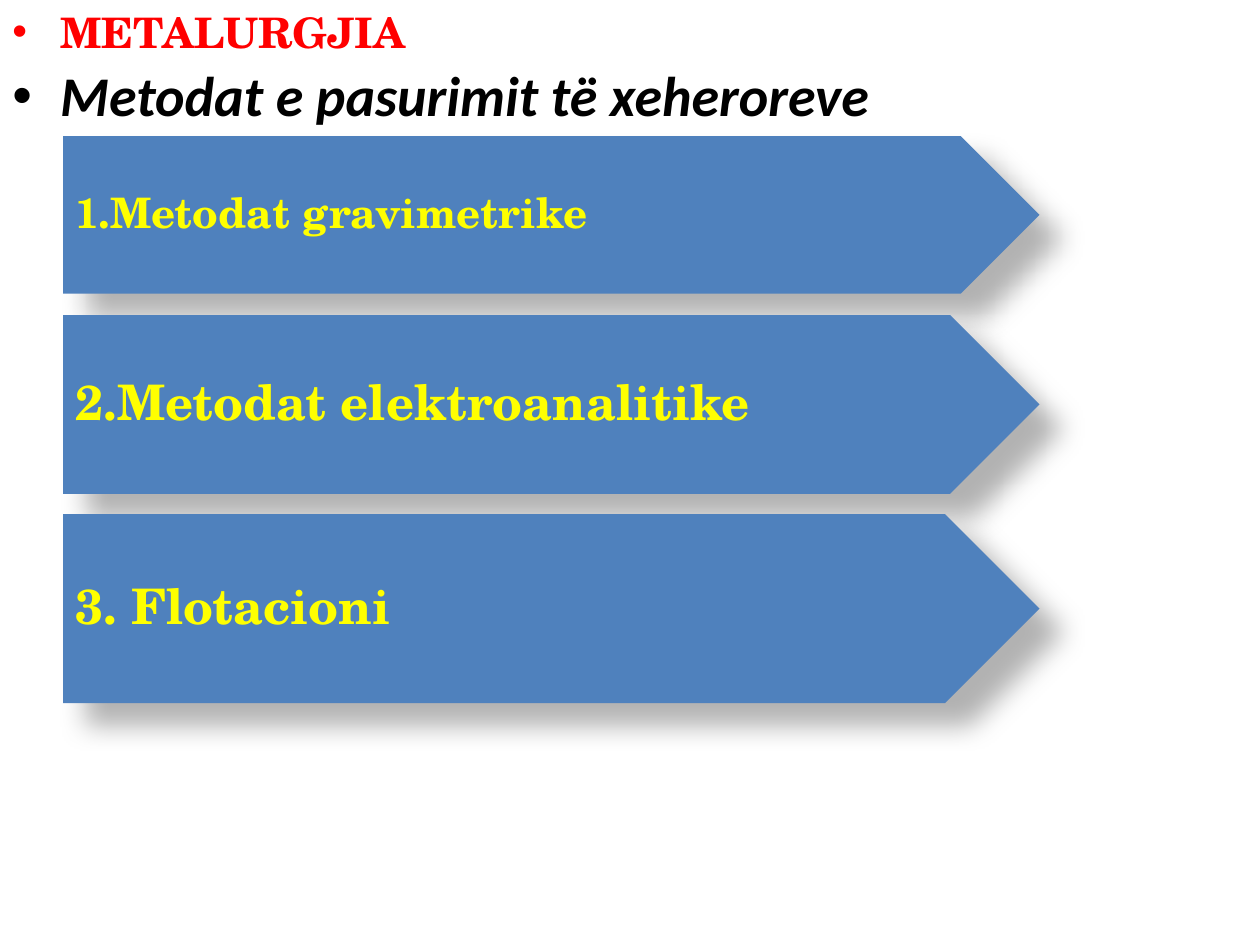
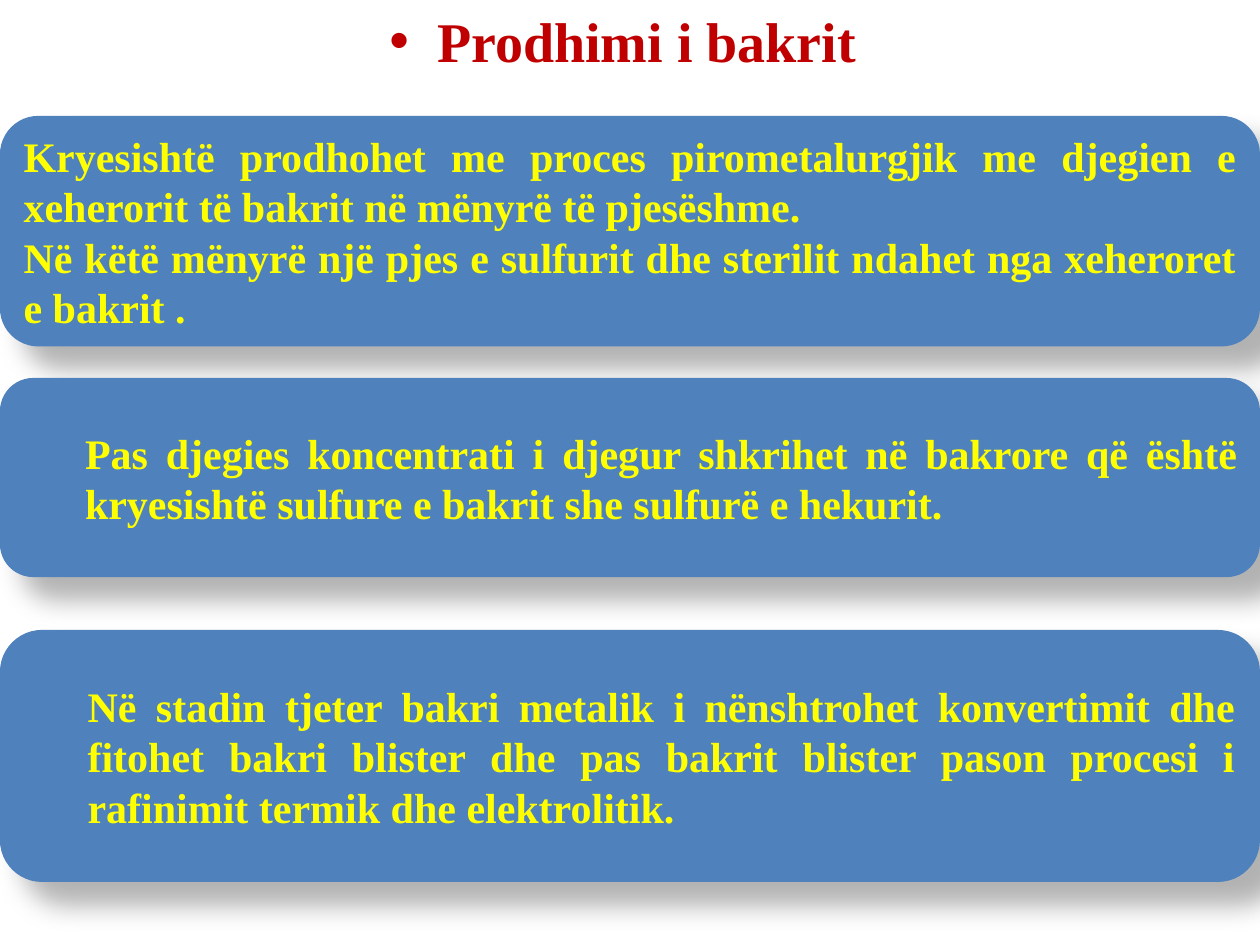
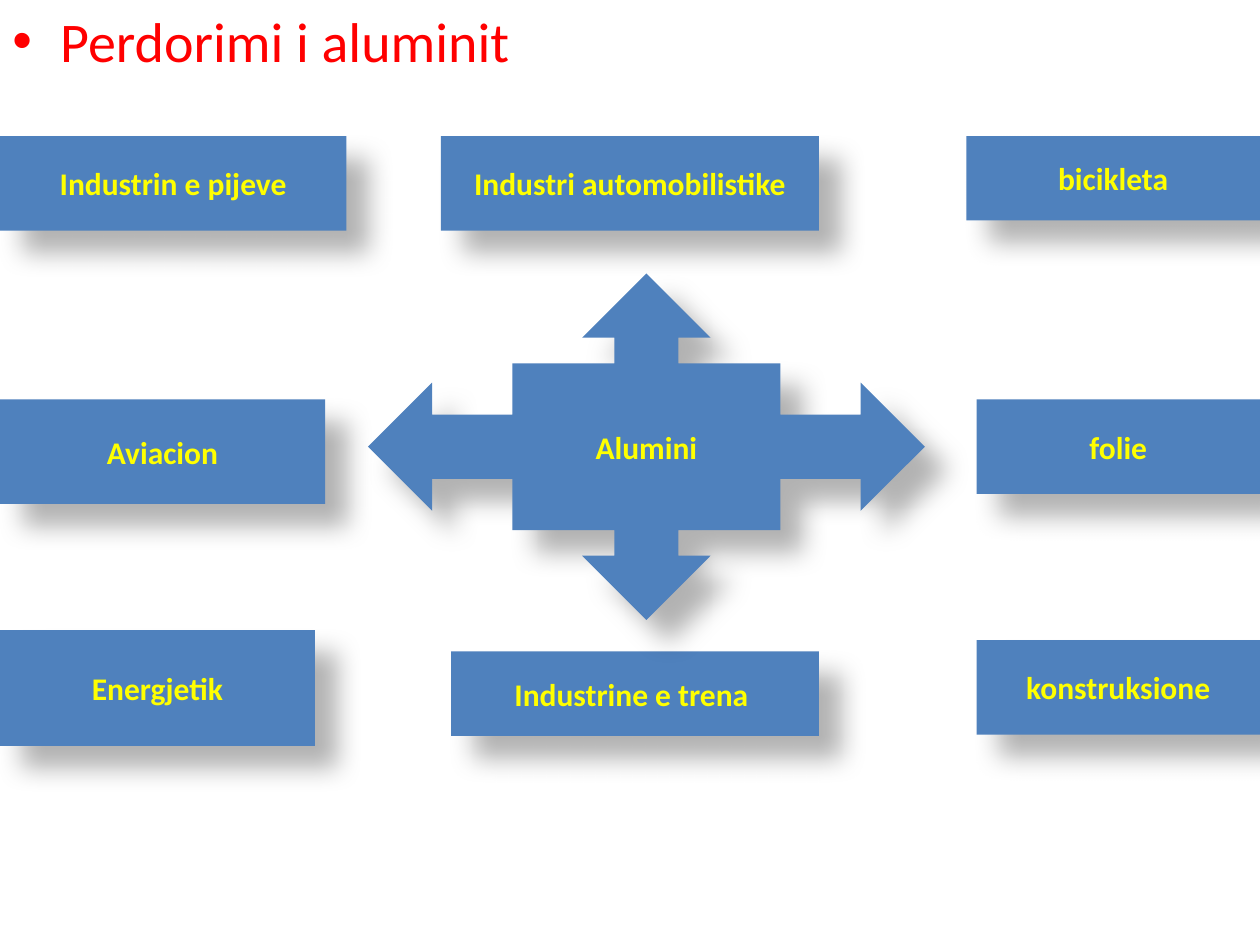
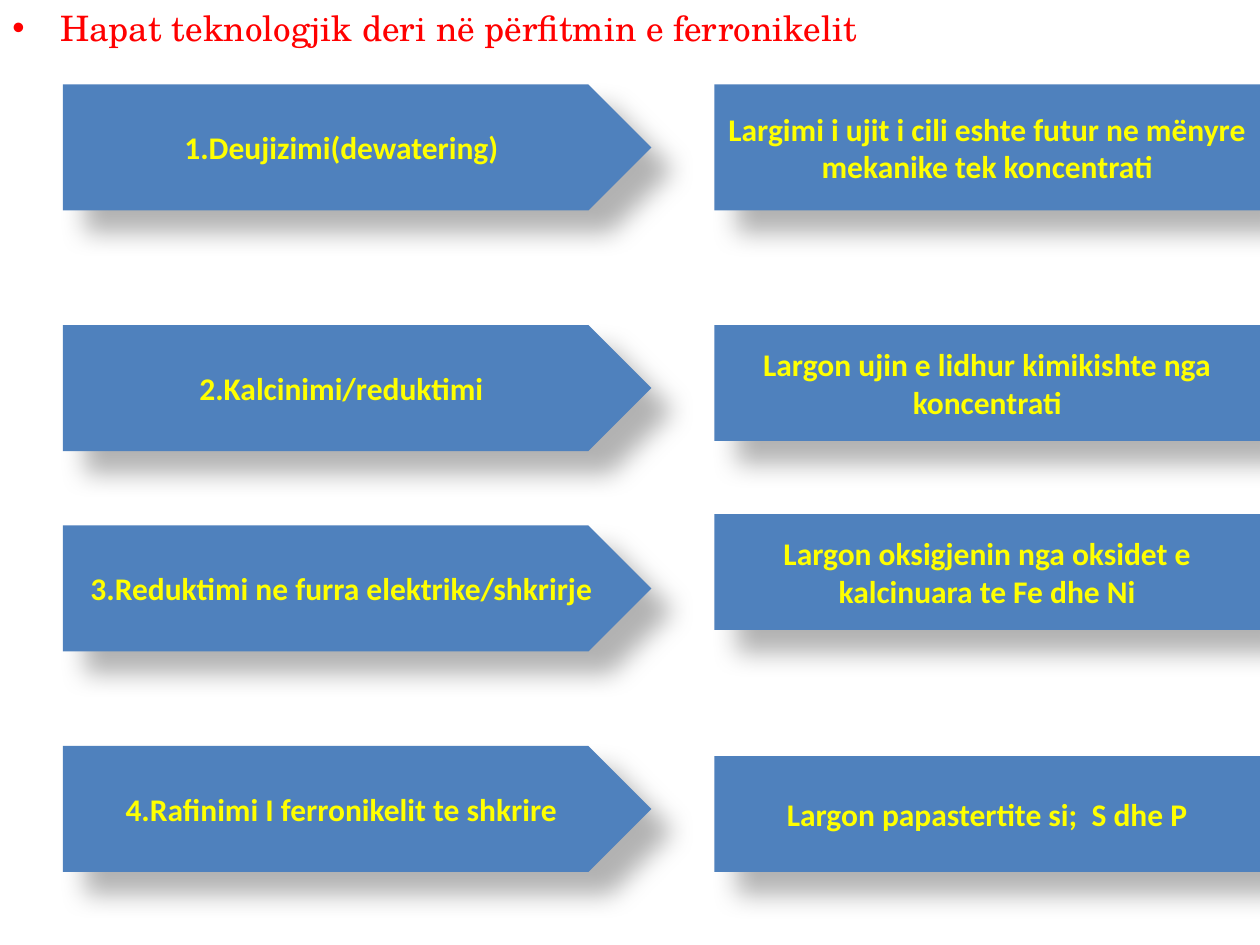
from lxml import etree
from pptx import Presentation
from pptx.dml.color import RGBColor
from pptx.enum.shapes import MSO_SHAPE as Shape
from pptx.enum.text import MSO_ANCHOR as Anchor, PP_ALIGN as Align
from pptx.oxml import parse_xml
from pptx.oxml.ns import nsdecls, qn
from pptx.util import Inches, Pt

BLUE, YELLOW, RED, DARK_RED, BLACK = "4F81BD", "FFFF00", "FF0000", "C00000", "000000"
SCHOLA, TIMES, CALIBRI = "TeX Gyre Schola", "Times New Roman", "Calibri"
WIDTH, HEIGHT = 10, 7.5

METHODS = [
    ("1.Metodat gravimetrike", 24, 1.08, 1.25),
    ("2.Metodat elektroanalitike", 28, 2.5, 1.42),
    ("3. Flotacioni", 28, 4.08, 1.5),
]

COPPER_STEPS = [
    (["Kryesishtë prodhohet me proces pirometalurgjik me djegien e xeherorit të bakrit në mënyrë të pjesëshme.",
      "Në këtë mënyrë një pjes e sulfurit dhe sterilit ndahet nga xeheroret e bakrit ."], 0, 0.92, 1.83),
    (["Pas djegies koncentrati i djegur shkrihet në bakrore që është kryesishtë sulfure e bakrit she sulfurë e hekurit."],
     1, 3, 1.58),
    (["Në stadin tjeter bakri metalik i nënshtrohet konvertimit dhe fitohet bakri blister dhe pas bakrit blister "
      "pason procesi i rafinimit termik dhe elektrolitik."], 1, 5, 2),
]

ALUMINIUM_USES = [
    ("Industrin e pijeve", (0, 1.08, 2.75, 0.75)),
    ("Industri automobilistike", (3.5, 1.08, 3, 0.75)),
    ("bicikleta", (7.67, 1.08, 2.33, 0.67)),
    ("Aviacion", (0, 3.17, 2.58, 0.83)),
    ("Energjetik", (0, 5, 2.5, 0.92)),
    ("Industrine e trena ", (3.58, 5.17, 2.92, 0.67)),
    ("konstruksione", (7.75, 5.08, 2.25, 0.75)),
    ("folie", (7.75, 3.17, 2.25, 0.75)),
]

FERRONICKEL_STEPS = [
    ("1.Deujizimi(dewatering)", 0.67),
    ("2.Kalcinimi/reduktimi", 2.58),
    ("3.Reduktimi ne furra elektrike/shkrirje", 4.17),
    ("4.Rafinimi I ferronikelit te shkrire", 5.92),
]
FERRONICKEL_EFFECTS = [
    ("Largimi i ujit i cili eshte futur ne mënyre mekanike tek koncentrati", 0.67, 1),
    ("Largon ujin e lidhur kimikishte nga koncentrati", 2.58, 0.92),
    ("Largon oksigjenin nga oksidet e kalcinuara te Fe dhe Ni", 4.08, 0.92),
    ("Largon papastertite si;  S dhe P", 6, 0.92),
]


def rgb(color):
    return RGBColor.from_string(color)


def style(p, size, font, color, bold=False, italic=False, align=Align.LEFT, spacing=None):
    p.font.size, p.font.name = Pt(size), font
    p.font.bold, p.font.italic = bold, italic
    p.font.color.rgb = rgb(color)
    p.alignment = align
    if spacing:
        p.line_spacing = spacing


def set_indent(p, left, first=0):
    pPr = p._p.get_or_add_pPr()
    pPr.set("marL", str(Inches(left)))
    pPr.set("indent", str(Inches(first)))
    return pPr


def add_heading(s, *lines):
    tf = s.shapes.add_textbox(0, 0, Inches(WIDTH), Inches(HEIGHT)).text_frame
    tf.word_wrap = True
    for i, (text, size, font, color, options) in enumerate(lines):
        p = tf.add_paragraph() if i else tf.paragraphs[0]
        p.text = text
        style(p, size, font, color, **options)
        p.space_before = Pt(size * 0.2)
        pPr = set_indent(p, 0.38, -0.38)
        bullet = parse_xml(f'<a:buChar {nsdecls("a")} char="•"/>')
        pPr.find(qn("a:defRPr")).addprevious(bullet)
        bullet.addprevious(parse_xml(f'<a:buFont {nsdecls("a")} typeface="Arial"/>'))


def add_shadow(sp):
    sp.shadow.inherit = False
    effects = sp._element.spPr.find(qn("a:effectLst"))
    shadow = etree.SubElement(effects, qn("a:outerShdw"), blurRad=str(Pt(15)), dist=str(Pt(18)),
                              dir=str(45 * 60000), algn="tl", rotWithShape="0")
    color = etree.SubElement(shadow, qn("a:srgbClr"), val=BLACK)
    etree.SubElement(color, qn("a:alpha"), val="30000")


def add_block(s, kind, box, texts, size=18, font=CALIBRI, align=Align.CENTER, spacing=None, level=0):
    sp = s.shapes.add_shape(kind, *map(Inches, box))
    sp.fill.solid()
    sp.fill.fore_color.rgb = rgb(BLUE)
    sp.line.fill.background()
    add_shadow(sp)
    tf = sp.text_frame
    tf.word_wrap = True
    tf.vertical_anchor = Anchor.MIDDLE
    for i, text in enumerate(texts):
        p = tf.add_paragraph() if i else tf.paragraphs[0]
        p.text = text
        style(p, size, font, YELLOW, bold=True, align=align, spacing=spacing)
        if level:
            p.level = level
            set_indent(p, 0.5 * level)


def build_methods(s):
    add_heading(s, ("METALURGJIA", 24, SCHOLA, RED, dict(bold=True)),
                ("Metodat e pasurimit të xeheroreve", 32, CALIBRI, BLACK,
                 dict(bold=True, italic=True, align=Align.JUSTIFY, spacing=0.9)))
    for text, size, top, height in METHODS:
        add_block(s, Shape.PENTAGON, (0.5, top, 7.75, height), [text], size, SCHOLA, Align.JUSTIFY, 0.9)


def build_copper(s):
    add_heading(s, ("Prodhimi i bakrit ", 32, TIMES, DARK_RED, dict(bold=True, align=Align.CENTER)))
    for texts, level, top, height in COPPER_STEPS:
        add_block(s, Shape.ROUNDED_RECTANGLE, (0, top, WIDTH, height), texts, 24, TIMES, Align.JUSTIFY, level=level)


def build_aluminium(s):
    add_heading(s, ("Perdorimi i aluminit", 32, CALIBRI, RED, {}))
    for text, box in ALUMINIUM_USES:
        add_block(s, Shape.RECTANGLE, box, [text])
    add_block(s, Shape.QUAD_ARROW_CALLOUT, (2.92, 2.17, 4.42, 2.75), ["Alumini"])


def build_ferronickel(s):
    add_heading(s, ("Hapat teknologjik deri në përfitmin e ferronikelit", 20, SCHOLA, RED, {}))
    for text, top in FERRONICKEL_STEPS:
        add_block(s, Shape.PENTAGON, (0.5, top, 4.67, 1), [text])
    for text, top, height in FERRONICKEL_EFFECTS:
        add_block(s, Shape.RECTANGLE, (5.67, top, 4.33, height), [text])


def main():
    prs = Presentation()
    prs.slide_width, prs.slide_height = Inches(WIDTH), Inches(HEIGHT)
    for build in (build_methods, build_copper, build_aluminium, build_ferronickel):
        build(prs.slides.add_slide(prs.slide_layouts[6]))
    prs.save("out.pptx")


if __name__ == "__main__":
    main()
